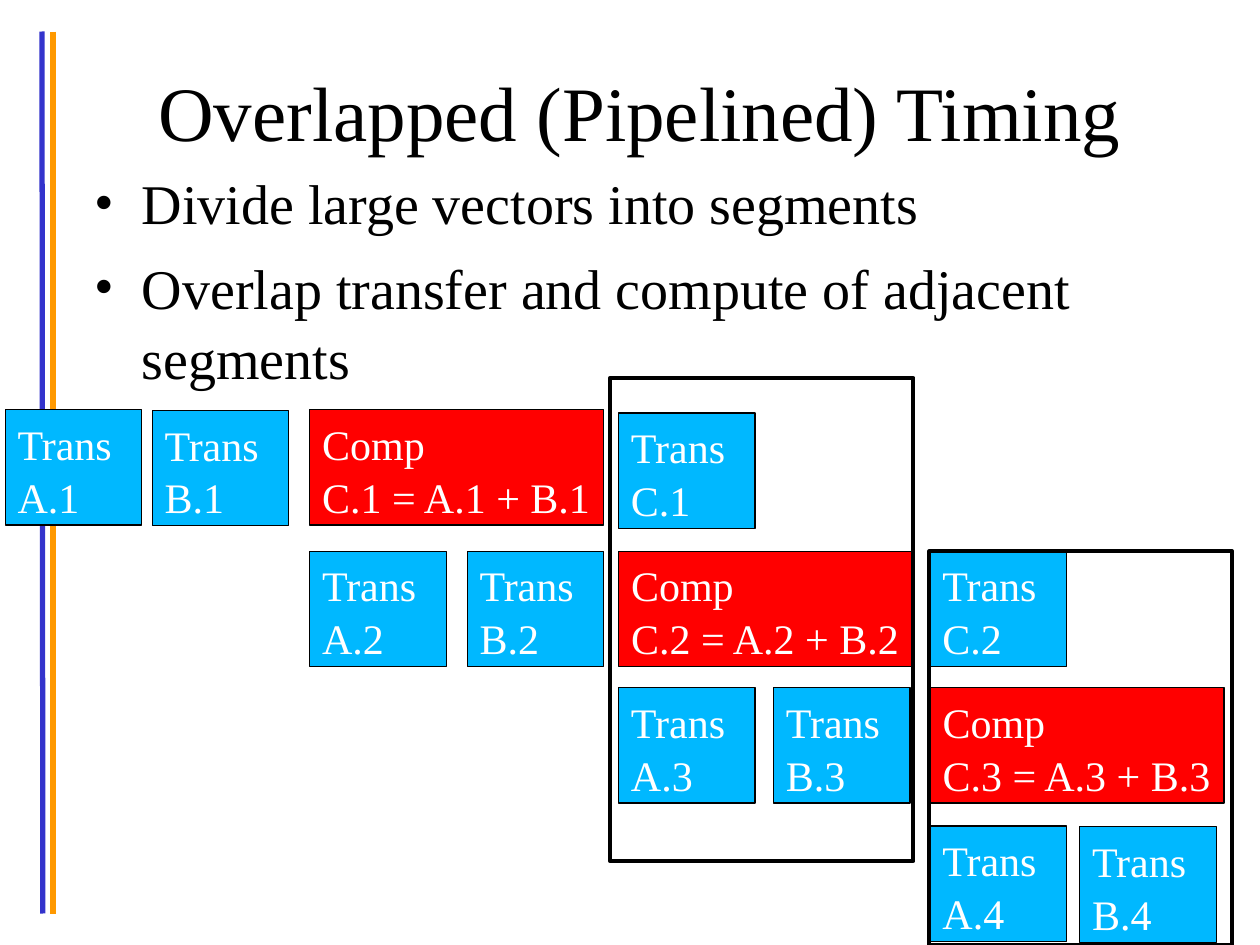
from lxml.etree import SubElement
from pptx import Presentation
from pptx.dml.color import RGBColor
from pptx.enum.shapes import MSO_CONNECTOR, MSO_SHAPE
from pptx.enum.text import MSO_ANCHOR, PP_ALIGN
from pptx.oxml.ns import qn
from pptx.util import Pt

COLORS = {
    "black": "000000",
    "white": "FFFFFF",
    "transfer": "00B8FF",
    "compute": "FF0000",
    "blue rule": "3333CC",
    "orange rule": "FF9900",
}
FONT = "Times New Roman"
TITLE = "Overlapped (Pipelined) Timing"
BULLETS = [
    "Divide large vectors into segments",
    "Overlap transfer and compute of adjacent segments",
]
BOX_HEIGHT = 66
TRANSFER_WIDTH, COMPUTE_WIDTH = 78, 168
# Each operation: left, top, vector, segment
TRANSFERS = [
    (3, 234, "A", 1), (87, 234.5, "B", 1), (353.5, 236, "C", 1),
    (177, 315, "A", 2), (267, 315, "B", 2), (531.5, 315, "C", 2),
    (353.5, 393, "A", 3), (442, 393, "B", 3),
    (531.5, 472, "A", 4), (617, 472.5, "B", 4),
]
# Each operation: left, top, segment
COMPUTES = [(177, 234, 1), (353.5, 315, 2), (531.5, 393, 3)]
STAGE_FRAMES = [(348.5, 216, 173.5, 276), (531, 315, 173, 225)]


def color(name):
    return RGBColor.from_string(COLORS[name])


def points(*lengths):
    return [Pt(length) for length in lengths]


def write_text(text_frame, lines, size, color_name="black", align=PP_ALIGN.LEFT,
               anchor=MSO_ANCHOR.TOP, margin=None, space_before=0, line_spacing=1.05):
    text_frame.word_wrap = True
    text_frame.vertical_anchor = anchor
    if margin is not None:
        text_frame.margin_left = text_frame.margin_right = Pt(margin)
        text_frame.margin_top = text_frame.margin_bottom = Pt(margin)
    for index, line in enumerate(lines):
        paragraph = text_frame.add_paragraph() if index else text_frame.paragraphs[0]
        paragraph.alignment = align
        paragraph.space_before = Pt(space_before)
        paragraph.line_spacing = line_spacing
        run = paragraph.add_run()
        run.text = line
        run.font.name = FONT
        run.font.size = Pt(size)
        run.font.color.rgb = color(color_name)


def add_bullet(paragraph, indent):
    properties = paragraph._p.get_or_add_pPr()
    properties.set("marL", str(Pt(indent)))
    properties.set("indent", str(-Pt(indent)))
    SubElement(properties, qn("a:buFont"), typeface=FONT)
    SubElement(properties, qn("a:buChar"), char="•")


def add_side_rules(slide, left, top, height):
    for start, end, name in ((0, 0.5, "blue rule"), (6.25, 6.25, "orange rule")):
        rule = slide.shapes.add_connector(
            MSO_CONNECTOR.STRAIGHT, *points(left + start, top, left + end, top + height))
        rule.line.color.rgb = color(name)
        rule.line.width = Pt(3)
        SubElement(rule._element.spPr, qn("a:effectLst"))


def add_title(slide, left, top, width, height):
    title = slide.shapes.title
    title.left, title.top, title.width, title.height = points(left, top, width, height)
    write_text(title.text_frame, [TITLE], 44, align=PP_ALIGN.CENTER,
               anchor=MSO_ANCHOR.MIDDLE, margin=0, line_spacing=1)


def add_bullets(slide, left, top, width, height):
    text_box = slide.shapes.add_textbox(*points(left, top, width, height))
    write_text(text_box.text_frame, BULLETS, 32, margin=0, space_before=8)
    for paragraph in text_box.text_frame.paragraphs:
        add_bullet(paragraph, 27)


def add_rectangle(slide, box, fill=None, line_width=0.75):
    shape = slide.shapes.add_shape(MSO_SHAPE.RECTANGLE, *points(*box))
    shape.shadow.inherit = False
    shape.line.color.rgb = color("black")
    shape.line.width = Pt(line_width)
    if fill:
        shape.fill.solid()
        shape.fill.fore_color.rgb = color(fill)
    else:
        shape.fill.background()
    return shape


def add_operation(slide, box, lines, fill):
    shape = add_rectangle(slide, box, fill)
    write_text(shape.text_frame, lines, 24, "white")


def add_pipeline(slide, left, top):
    """Place the transfers, computations and stage frames from the given corner."""
    for x, y, vector, segment in TRANSFERS:
        add_operation(slide, (left + x, top + y, TRANSFER_WIDTH, BOX_HEIGHT),
                      [f"Trans {vector}.{segment}"], "transfer")
    for x, y, segment in COMPUTES:
        add_operation(slide, (left + x, top + y, COMPUTE_WIDTH, BOX_HEIGHT),
                      ["Comp", f"C.{segment} = A.{segment} + B.{segment}"], "compute")
    for x, y, width, height in STAGE_FRAMES:
        add_rectangle(slide, (left + x, top + y, width, height), line_width=2.25)


def main():
    presentation = Presentation()
    presentation.slide_width, presentation.slide_height = points(720, 540)
    slide = presentation.slides.add_slide(presentation.slide_layouts[5])
    add_side_rules(slide, 24, 18, 504)
    add_title(slide, 54, 18, 623.5, 90)
    add_bullets(slide, 54, 94.5, 623.5, 378)
    add_pipeline(slide, 0, 0)
    presentation.save("out.pptx")


if __name__ == "__main__":
    main()
